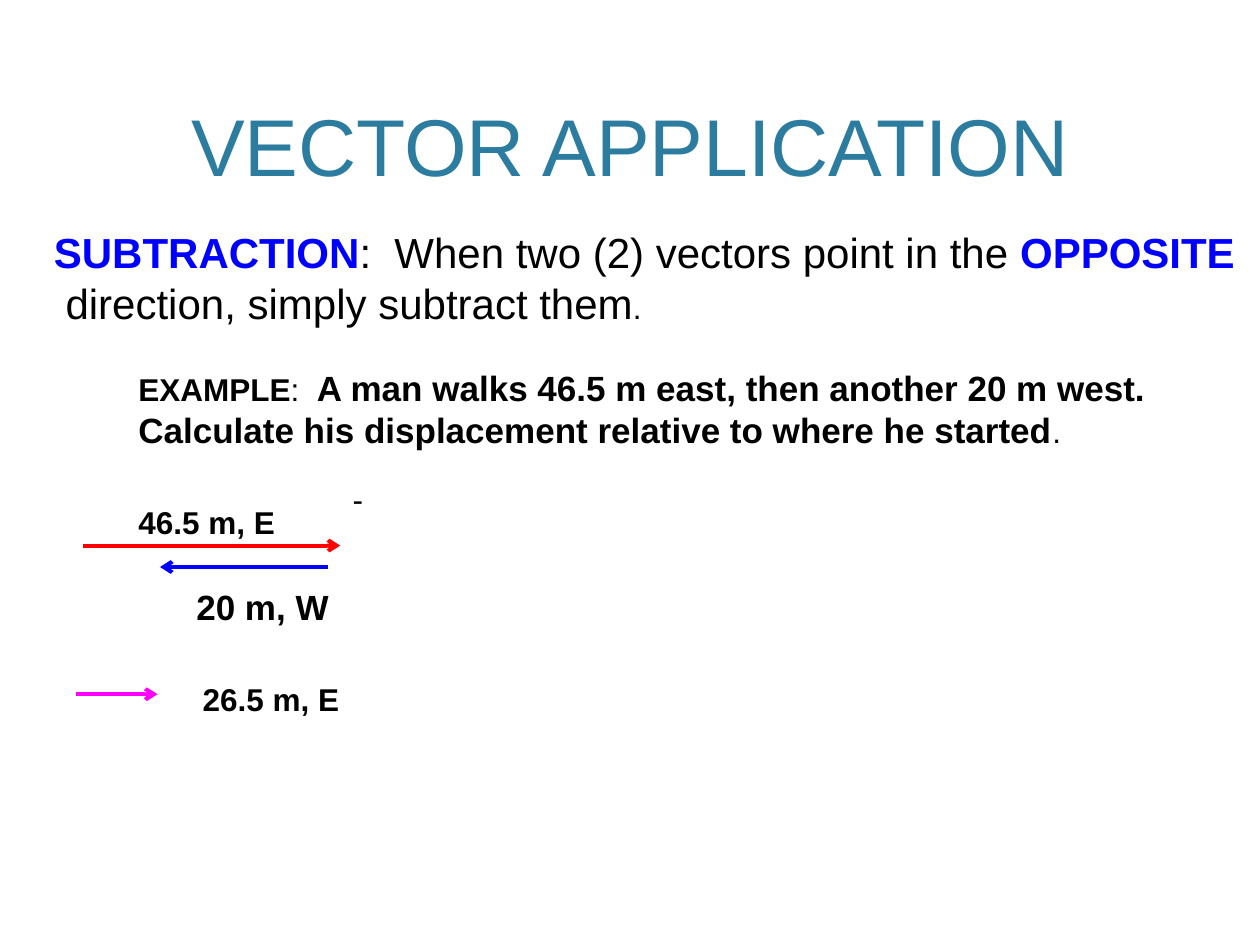
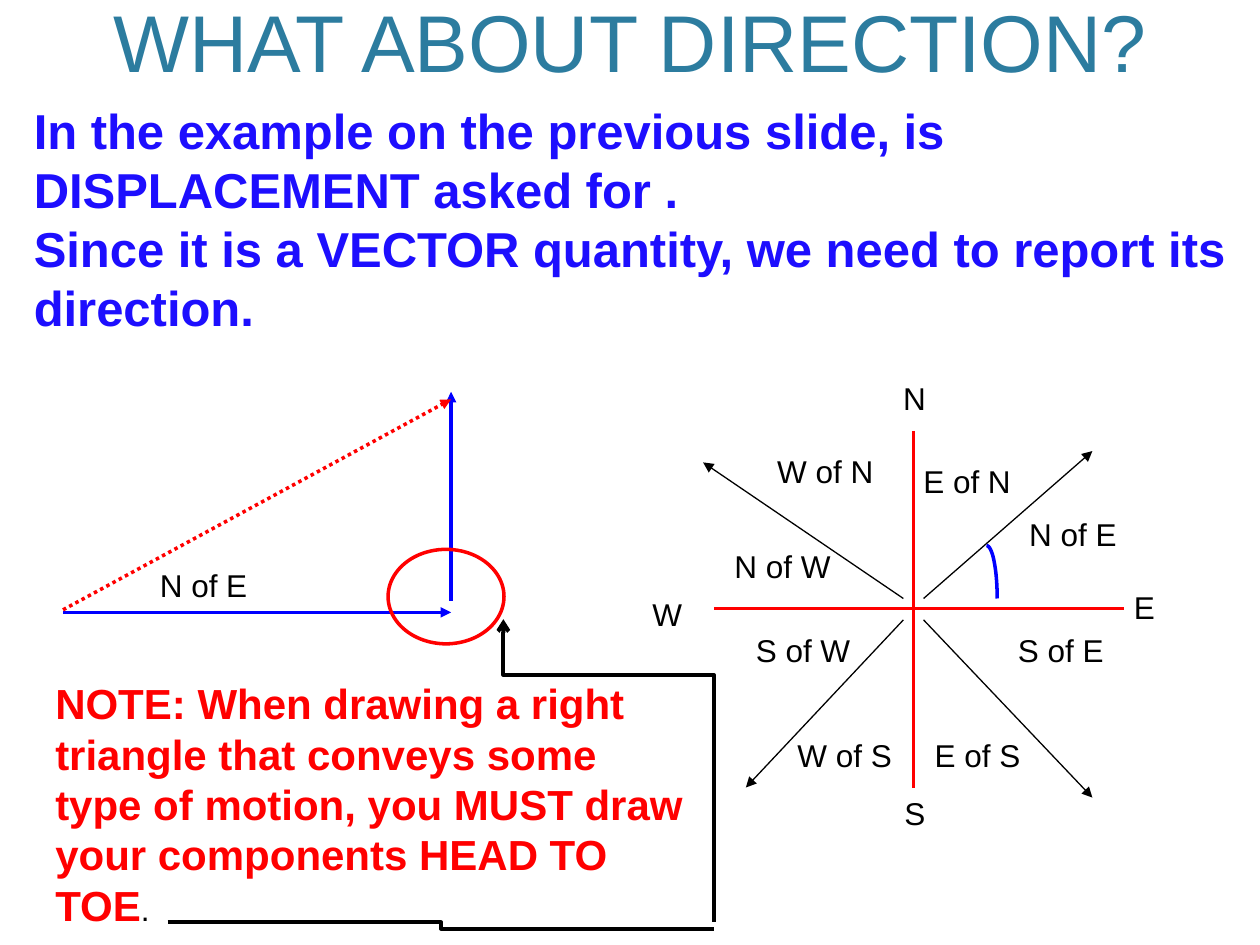
from collections import namedtuple
from math import cos, pi, sin

from lxml.etree import SubElement as Sub
from pptx import Presentation as Deck
from pptx.dml.color import RGBColor as Rgb
from pptx.enum.dml import MSO_LINE_DASH_STYLE as Dash
from pptx.enum.shapes import MSO_AUTO_SHAPE_TYPE as Form
from pptx.enum.shapes import MSO_CONNECTOR_TYPE as Link
from pptx.enum.text import MSO_ANCHOR as Anchor
from pptx.enum.text import MSO_AUTO_SIZE as Fit
from pptx.enum.text import PP_ALIGN as Align
from pptx.oxml.ns import qn
from pptx.util import Inches, Pt

WIDE, TALL = Inches(10), Inches(7.5)
COLS, ROWS = 100, 75
FONT = "Arial"
BLACK, RED, BLUE = "000000", "FF0000", "0000FF"
TEAL, INDIGO, PINK = "2C7C9F", "1D0EFE", "FF00FF"

Box = namedtuple("Box", "slide x y w h")


def across(n):
    return round(WIDE * n / COLS)


def down(n):
    return round(TALL * n / ROWS)


def spot(box, x, y):
    return across(box.x + x), down(box.y + y)


def area(box, x, y, w, h):
    return *spot(box, x, y), across(w), down(h)


def paint(target, tint):
    target.rgb = Rgb.from_string(tint)


def add_run(para, text, size, tint=BLACK, bold=False, gap=0):
    run = para.add_run()
    run.text = text
    font = run.font
    font.name, font.size, font.bold = FONT, Pt(size), bold
    paint(font.color, tint)
    if gap:
        run._r.get_or_add_rPr().set("spc", str(gap))


def write(box, place, *lines, wrap=False):
    frame = box.slide.shapes.add_textbox(*area(box, *place)).text_frame
    frame.word_wrap = wrap
    frame.auto_size = Fit.SHAPE_TO_FIT_TEXT
    for i, line in enumerate(lines):
        para = frame.add_paragraph() if i else frame.paragraphs[0]
        for part in line:
            add_run(para, *part)


def label(box, text, x, y, w):
    write(box, (x, y, w, 4), [(text, 18)])


def stroke(shape, tint, width):
    paint(shape.line.color, tint) if shape.line.fill.type else shape.line.fill.solid()
    paint(shape.line.color, tint)
    shape.line.width = Pt(width)


def connect(box, start, end, tint, width, head=None, dash=None, kind=Link.STRAIGHT):
    link = box.slide.shapes.add_connector(kind, *spot(box, *start), *spot(box, *end))
    stroke(link, tint, width)
    if dash:
        link.line.dash_style = dash
    props = link._element.spPr
    if head:
        Sub(props.find(qn("a:ln")), qn("a:tailEnd"), type=head)
    Sub(props, qn("a:effectLst"))
    return link


def outline(shape, tint, width):
    shape.shadow.inherit = False
    shape.fill.background()
    stroke(shape, tint, width)


def heading(box, text):
    title = box.slide.shapes.title
    title.left, title.top, title.width, title.height = area(box, 0, 0, box.w, box.h)
    frame = title.text_frame
    frame.auto_size, frame.word_wrap = Fit.NONE, True
    frame.vertical_anchor = Anchor.BOTTOM
    para = frame.paragraphs[0]
    para.alignment = Align.CENTER
    add_run(para, text, 46, TEAL)


def rule(box):
    write(box, (0, 0, box.w, 9.1),
          [("SUBTRACTION", 24, BLUE, True), (":", 24, BLACK, False, 667),
           (" When two (2) vectors point in the ", 24), ("OPPOSITE", 24, BLUE, True)],
          [(" direction, simply subtract them", 24), (".", 18)])


def example(box):
    write(box, (0, 0, box.w, 7.8),
          [("EXAMPLE", 18, BLACK, True), (":", 18, BLACK, False, 500), (" ", 18),
           ("A man walks 46.5 m east, then another 20 m west.", 20, BLACK, True)],
          [("Calculate his displacement relative to where he started", 20, BLACK, True),
           (".", 18)])


def walk(box):
    for start, end, y, tint in ((0.6, 21, 5.7, RED), (20, 6.7, 7.4, BLUE),
                                (0, 6.5, 17.5, PINK)):
        connect(box, (start, y), (end, y), tint, 2.25, "arrow")
    for text, size, x, y, w in (("46.5 m, E", 18, 4, 1.8, 13),
                                ("20 m, W", 20, 8.6, 8.4, 12.6),
                                ("26.5 m, E", 18, 9.1, 15.9, 13)):
        write(box, (x, y, w, 4), [(text, size, BLACK, True)])
    write(box, (21, 0, 3.5, 4), [("-", 18)], wrap=True)


def intro(box):
    write(box, (0, 0, box.w, box.h),
          [("In the example on the previous slide, is DISPLACEMENT asked for .",
            28, INDIGO, True)],
          [("Since it is a VECTOR quantity, we need to report its direction.",
            28, INDIGO, True)], wrap=True)


def compass(box):
    connect(box, (22.5, 5.2), (22.5, 33.5), RED, 2)
    connect(box, (6.7, 19.3), (39.2, 19.3), RED, 2)
    for start, end in (((23.3, 18.5), (36.7, 6.8)), ((21.7, 20.2), (9.2, 33.5)),
                       ((21.7, 18.5), (5.8, 7.7)), ((23.3, 20.2), (36.7, 34.3))):
        connect(box, start, end, BLACK, 0.75, "triangle")
    for mark in (("N", 20.7, 0.6, 3.8), ("S", 20.8, 33.5, 3.7),
                 ("E", 39, 17.2, 3.7), ("W", 0.8, 17.7, 4.4),
                 ("N of E", 30.7, 11.4, 9), ("E of N", 22.3, 7.2, 9),
                 ("S of W", 9, 20.6, 9.5), ("W of S", 12.3, 28.9, 9.5),
                 ("N of W", 7.3, 13.9, 9.7), ("W of N", 10.7, 6.4, 9.7),
                 ("S of E", 29.8, 20.6, 8.8), ("E of S", 23.2, 28.9, 8.8)):
        label(box, *mark)
    steps = 16
    turns = [pi / 2 * i / steps for i in range(steps + 1)]
    curve = [spot(box, 28.3 + 0.85 * sin(t), 18.5 - 4.2 * cos(t)) for t in turns]
    pen = box.slide.shapes.build_freeform(*curve[0])
    pen.add_line_segments(curve[1:], close=False)
    outline(pen.convert_to_shape(), BLUE, 2)


def triangle(box):
    connect(box, (0, 17.6), (30.8, 17.6), BLUE, 2, "triangle")
    connect(box, (30.8, 16.7), (30.8, 0.1), BLUE, 2, "triangle")
    connect(box, (0, 17.4), (30.8, 0.7), RED, 2, "triangle", Dash.ROUND_DOT)
    ring = box.slide.shapes.add_shape(Form.OVAL, *area(box, 25.8, 12.6, 9.2, 7.5))
    outline(ring, RED, 2)
    label(box, "N of E", 6.7, 13.4, 9)


def note(box):
    write(box, (0, 0, box.w, box.h),
          [("NOTE: When drawing a right triangle that conveys some type of motion, "
            "you MUST draw your components HEAD TO TOE", 24, RED, True), (".", 18)],
          wrap=True)
    bend = connect(box, (32.9, 16.2), (56.9, -0.5), BLACK, 2.25, "arrow",
                   kind=Link.ELBOW)
    props = bend._element.spPr
    props.find(qn("a:xfrm")).set("rot", str(270 * 60000))
    guides = props.find(qn("a:prstGeom")).find(qn("a:avLst"))
    Sub(guides, qn("a:gd"), name="adj1", fmla="val 81600")
    connect(box, (9.9, 19.9), (53.3, 20.4), BLACK, 2.25, kind=Link.ELBOW)


def main():
    deck = Deck()
    deck.slide_width, deck.slide_height = WIDE, TALL
    plain = deck.slide_layouts[5]

    first = deck.slides.add_slide(plain)
    heading(Box(first, 6, 1.2, 88, 14.6), "VECTOR APPLICATION")
    rule(Box(first, 3.3, 17.5, 96.6, 9.1))
    example(Box(first, 10, 28.6, 84, 7.8))
    walk(Box(first, 6, 37.6, 25, 20))

    second = deck.slides.add_slide(plain)
    heading(Box(second, 6, 1.2, 88, 6.3), "WHAT ABOUT DIRECTION?")
    intro(Box(second, 1.7, 7.5, 98.3, 19.9))
    compass(Box(second, 50, 29, 43, 38))
    triangle(Box(second, 5, 31, 35, 20))
    note(Box(second, 3.4, 53.3, 51.8, 21.2))

    deck.save("out.pptx")


if __name__ == "__main__":
    main()
